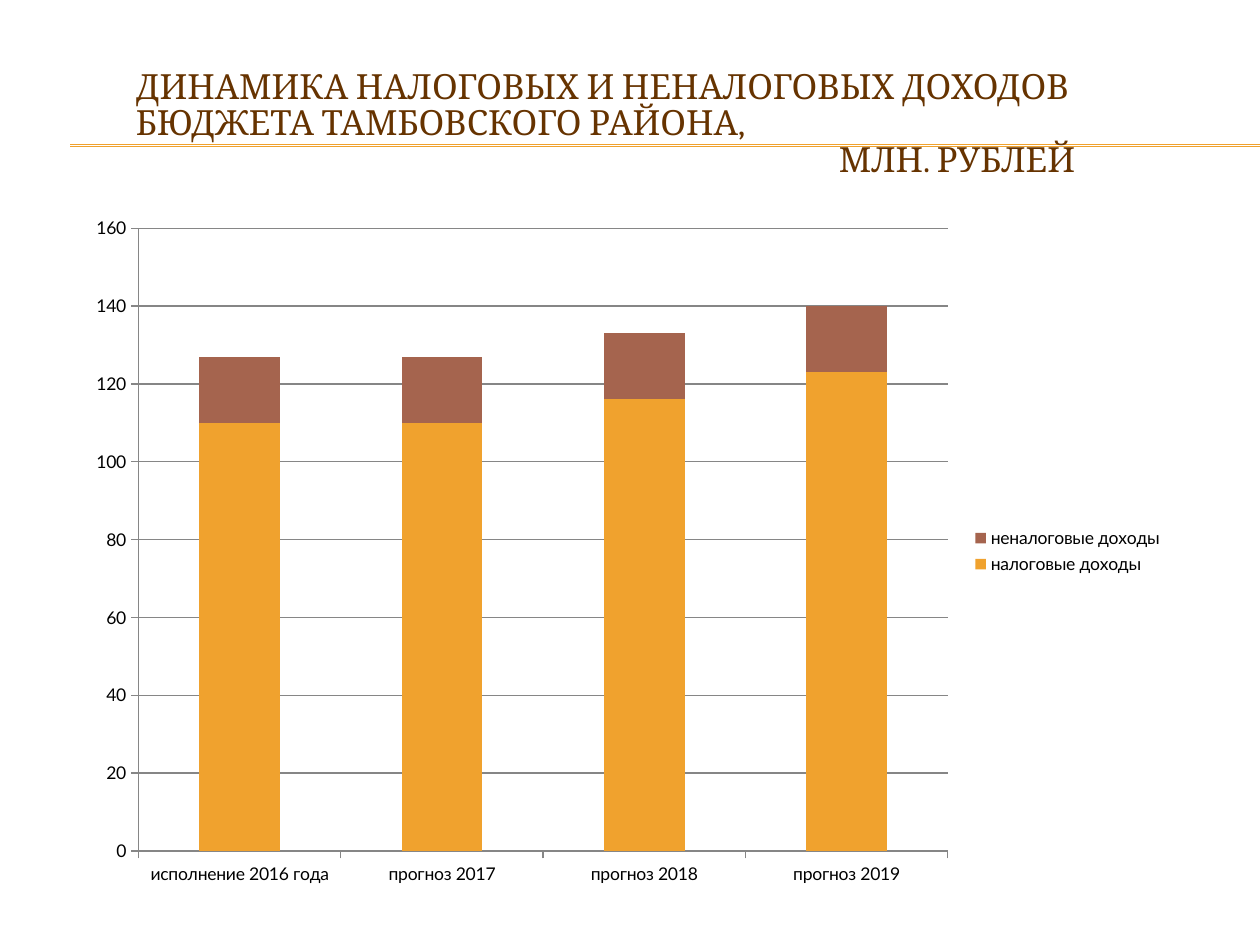
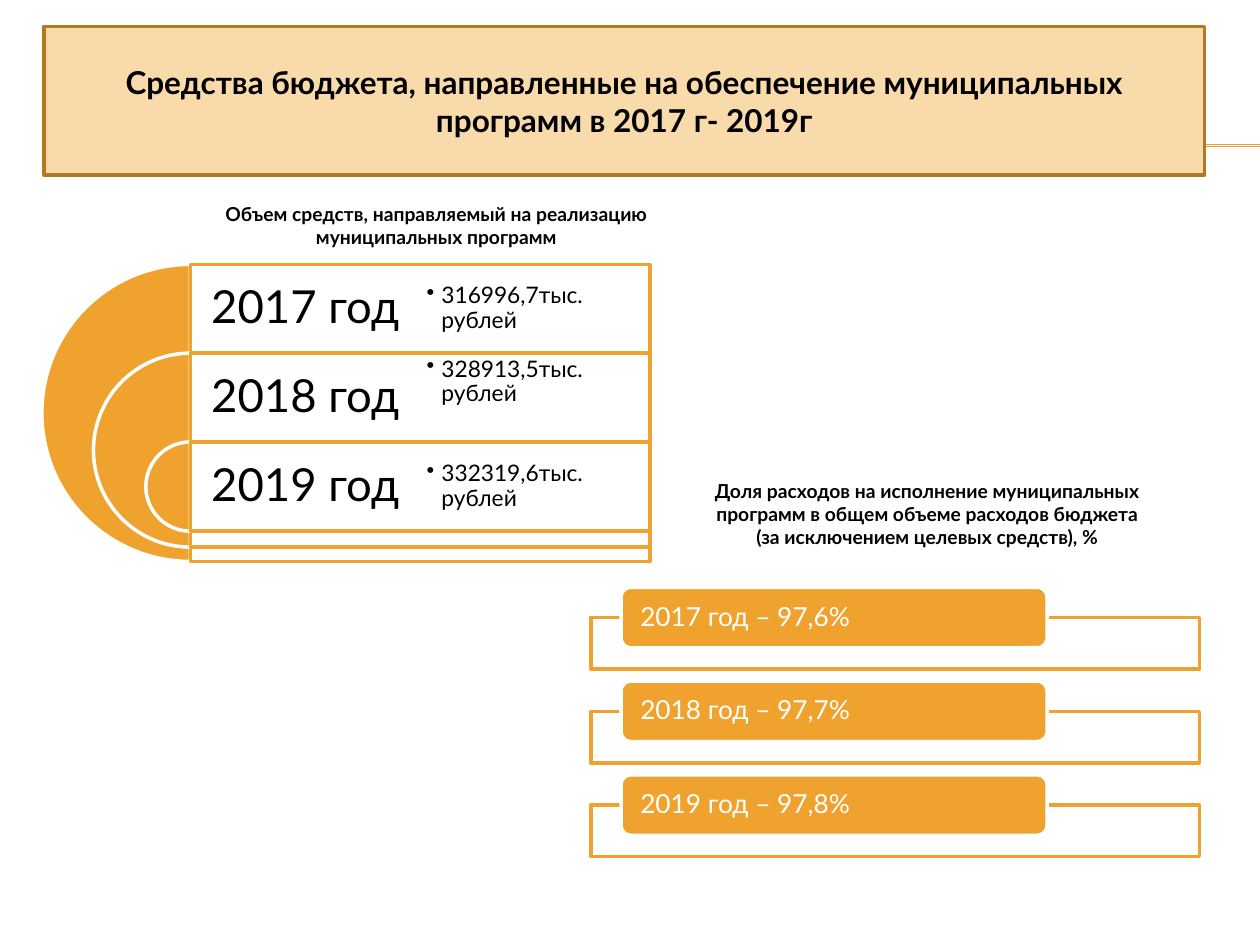
from lxml import etree
from pptx import Presentation
from pptx.chart.data import CategoryChartData
from pptx.dml.color import RGBColor
from pptx.enum.chart import XL_CHART_TYPE, XL_LEGEND_POSITION, XL_TICK_MARK
from pptx.enum.shapes import MSO_CONNECTOR, MSO_SHAPE
from pptx.enum.text import MSO_ANCHOR, MSO_AUTO_SIZE, PP_ALIGN
from pptx.oxml.ns import qn
from pptx.util import Cm, Pt

STACKED = XL_CHART_TYPE.COLUMN_STACKED
RIGHT = XL_LEGEND_POSITION.RIGHT
OUTSIDE = XL_TICK_MARK.OUTSIDE
STRAIGHT = MSO_CONNECTOR.STRAIGHT
RECT, ROUND, PIE = MSO_SHAPE.RECTANGLE, MSO_SHAPE.ROUNDED_RECTANGLE, MSO_SHAPE.PIE
TOP, MIDDLE = MSO_ANCHOR.TOP, MSO_ANCHOR.MIDDLE
FIXED = MSO_AUTO_SIZE.NONE
LEFT, CENTER = PP_ALIGN.LEFT, PP_ALIGN.CENTER

GOLD, RUST, BROWN = "F0A22E", "A5644E", "663300"
CREAM, OCHRE, GREY = "F9DAAB", "B27822", "868686"
WHITE, BLACK = "FFFFFF", "000000"
INSET = (0.25, 0.13, 0.25, 0.13)


def color(code):
    return RGBColor.from_string(code)


class Deck:
    """Hold the shared style and the slide being built."""

    def __init__(self):
        self.file = Presentation()
        self.file.slide_width, self.file.slide_height = Cm(25.4), Cm(19.05)
        self.font = "Lato"
        self.slide = None

    def start(self):
        self.slide = self.file.slides.add_slide(self.file.slide_layouts[5])
        for y in (2.92, 2.95):
            self.rule(1.42, 25.4, y)

    def rule(self, left, right, y):
        line = self.slide.shapes.add_connector(
            STRAIGHT, Cm(left), Cm(y), Cm(right), Cm(y))
        self.edge(line, GOLD, 0.75)
        etree.SubElement(line.element.spPr, qn("a:effectLst"))

    def edge(self, shape, code, width=2):
        shape.line.color.rgb = color(code)
        shape.line.width = Pt(width)

    def paint(self, shape, code, edge, alpha=None):
        shape.fill.solid()
        shape.fill.fore_color.rgb = color(code)
        self.edge(shape, edge)
        if alpha:
            tone = shape.element.spPr.find(".//" + qn("a:srgbClr"))
            etree.SubElement(tone, qn("a:alpha")).set("val", str(alpha * 1000))

    def title(self, place, lines, **style):
        head = self.slide.shapes.title
        head.left, head.top, head.width, head.height = map(Cm, place)
        tree = head.element.getparent()
        tree.append(head.element)
        self.text(head, lines, **style)
        return head

    def shape(self, kind, place, code, edge, alpha=None):
        item = self.slide.shapes.add_shape(kind, *map(Cm, place))
        item.shadow.inherit = False
        self.paint(item, code, edge, alpha)
        return item

    def panel(self, place):
        self.shape(RECT, place, WHITE, GOLD, alpha=90)

    def half(self, place):
        item = self.shape(PIE, place, GOLD, WHITE)
        item.adjustments[0], item.adjustments[1] = 54, 162

    def label(self, place, lines, **style):
        self.text(self.slide.shapes.add_textbox(*map(Cm, place)), lines, **style)

    def text(self, shape, lines, size, ink=BLACK, font=None, bold=False,
             align=CENTER, anchor=MIDDLE, inset=INSET, space=1.0, bullet=None):
        frame = shape.text_frame
        frame.word_wrap = True
        frame.auto_size = FIXED
        frame.vertical_anchor = anchor
        (frame.margin_left, frame.margin_top,
         frame.margin_right, frame.margin_bottom) = map(Cm, inset)
        for i, line in enumerate(lines):
            para = frame.add_paragraph() if i else frame.paragraphs[0]
            para.alignment = align
            para.line_spacing = space
            if bullet:
                self.indent(para, 0.3, -0.3)
                etree.SubElement(para._p.get_or_add_pPr(),
                                 qn("a:buChar")).set("char", bullet)
            run = para.add_run()
            run.text = line
            run.font.name = font or self.font
            run.font.size = Pt(size)
            run.font.bold = bold
            run.font.color.rgb = color(ink)

    def indent(self, para, left, first=0):
        props = para._p.get_or_add_pPr()
        props.set("marL", str(Cm(left)))
        props.set("indent", str(Cm(first)))

    def chart(self, place, names, rows):
        data = CategoryChartData()
        data.categories = names
        for name, values, _ in rows:
            data.add_series(name, values)
        chart = self.slide.shapes.add_chart(STACKED, *map(Cm, place), data).chart
        chart.has_title = False
        chart.font.name, chart.font.size = self.font, Pt(10)
        chart.font.color.rgb = color(BLACK)
        chart.has_legend = True
        chart.legend.position = RIGHT
        chart.legend.include_in_layout = False
        plot = chart.plots[0]
        plot.gap_width, plot.overlap = 150, 100
        plot.vary_by_categories = False
        for part, (_, _, code) in zip(plot.series, rows):
            part.format.fill.solid()
            part.format.fill.fore_color.rgb = color(code)
        scale = chart.value_axis
        scale.minimum_scale, scale.maximum_scale, scale.major_unit = 0, 160, 20
        for axis in (chart.category_axis, scale):
            axis.major_tick_mark = OUTSIDE
            self.edge(axis.format, GREY, 0.75)
        self.edge(scale.major_gridlines.format, GREY, 0.75)


def income(deck):
    deck.start()
    head = deck.title(
        (2.49, 1.12, 21.67, 2.79),
        ["ДИНАМИКА НАЛОГОВЫХ И НЕНАЛОГОВЫХ ДОХОДОВ БЮДЖЕТА ТАМБОВСКОГО РАЙОНА,",
         "МЛН. РУБЛЕЙ"],
        size=19.8, ink=BROWN, font="Cambria", align=LEFT, space=0.88)
    deck.indent(head.text_frame.paragraphs[1], 14.17)
    deck.chart(
        (1.5, 4.11, 22.2, 14),
        ["исполнение 2016 года", "прогноз 2017", "прогноз 2018", "прогноз 2019"],
        [("налоговые доходы", (110, 110, 116, 123), GOLD),
         ("неналоговые доходы", (17, 17, 17, 17), RUST)])


def funds(deck):
    deck.start()
    head = deck.title(
        (0.89, 0.53, 23.39, 3),
        ["Средства бюджета, направленные на обеспечение муниципальных "
         "программ в 2017 г- 2019г"], size=18, bold=True)
    deck.paint(head, CREAM, OCHRE)

    years = [(2017, "97,6%", "316996,7", 5.99), (2018, "97,7%", "328913,5", 3.91),
             (2019, "97,8%", "332319,6", 1.8)]
    for i, (year, share, _, _) in enumerate(years):
        y = 11.84 + 1.89 * i
        deck.panel((11.91, y + 0.61, 12.27, 1.04))
        tab = deck.shape(ROUND, (12.52, y, 8.59, 1.22), GOLD, WHITE)
        deck.text(tab, [f"{year} год – {share}"], size=15, ink=WHITE,
                  align=LEFT, inset=(0.33, 0, 0.33, 0), space=0.9)
    deck.label(
        (14.1, 9.53, 9.19, 2.13),
        ["Доля расходов на исполнение муниципальных программ в общем объеме "
         "расходов бюджета (за исключением целевых средств), %"],
        size=11, bold=True, anchor=TOP)

    axis, step, half = 3.84, 1.79, 4.63
    for i, (year, _, total, size) in enumerate(years):
        y = 5.33 + step * i
        deck.half((axis - size / 2, y, size, size))
        deck.panel((axis, y, 2 * half, size))
        deck.label((axis, y, half, step), [f"{year} год"], size=26,
                   inset=(0.28,) * 4, space=0.9)
        foot = 0.76 if year == 2018 else 0.13
        deck.label((axis + half, y, half, step), [f"{total}тыс. рублей"], size=13,
                   align=LEFT, inset=(0.13, 0.13, 0.13, foot), space=0.9, bullet="•")
    deck.label((1.5, 3.94, 14.6, 1.19),
               ["Объем средств, направляемый на реализацию",
                "муниципальных программ"], size=11, bold=True, anchor=TOP)


def main():
    deck = Deck()
    income(deck)
    funds(deck)
    deck.file.save("out.pptx")


if __name__ == "__main__":
    main()
